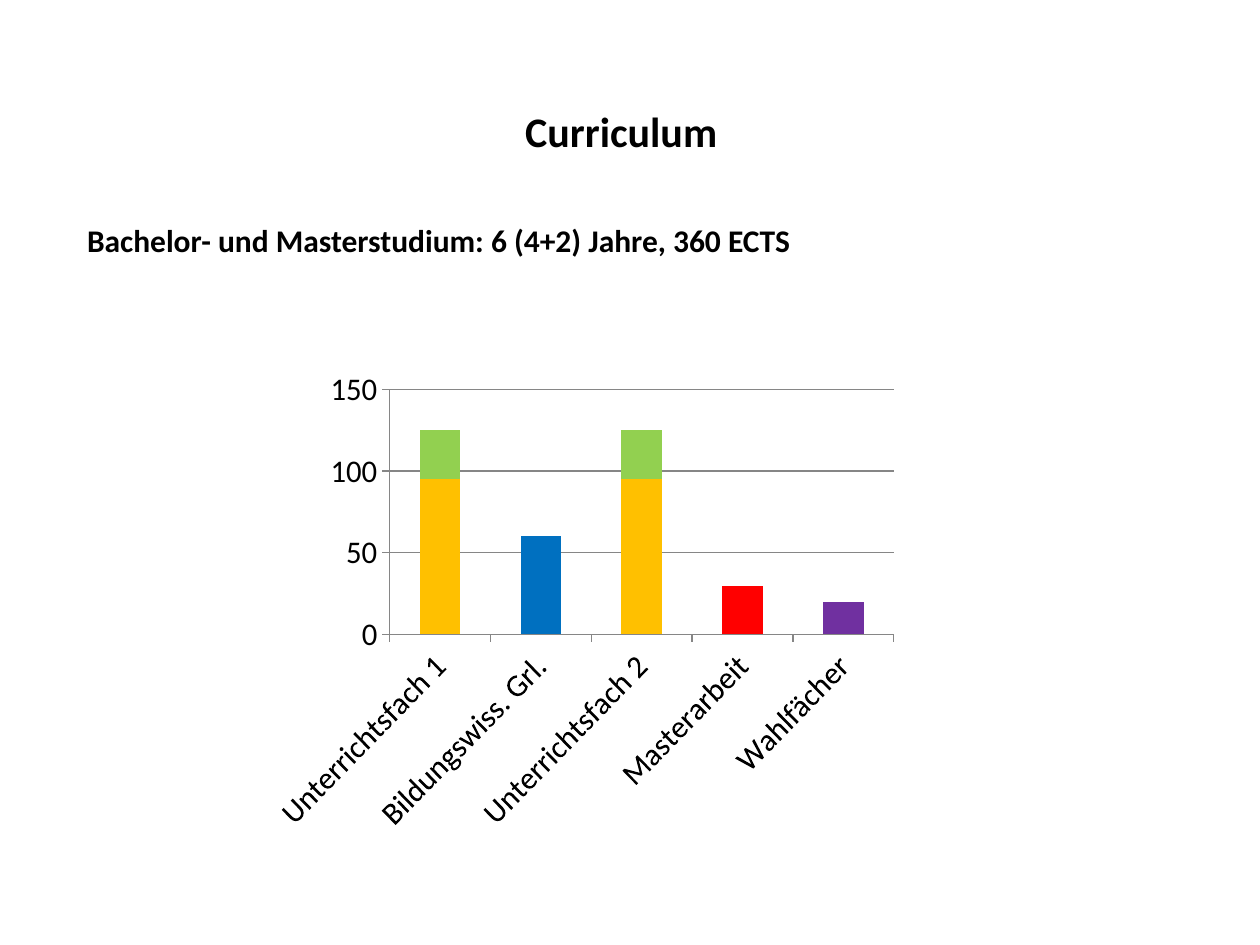
from dataclasses import dataclass, field
from typing import Optional

from lxml.etree import SubElement
from pptx import Presentation
from pptx.chart.data import CategoryChartData
from pptx.dml.color import RGBColor
from pptx.enum.chart import XL_CHART_TYPE, XL_TICK_LABEL_POSITION, XL_TICK_MARK
from pptx.enum.text import MSO_ANCHOR, MSO_AUTO_SIZE, PP_ALIGN
from pptx.oxml.ns import qn
from pptx.util import Cm, Pt

FONT = "Calibri"
BLACK = RGBColor(0x00, 0x00, 0x00)
GREY = RGBColor(0x86, 0x86, 0x86)
AMBER = RGBColor(0xFF, 0xC0, 0x00)
GREEN = RGBColor(0x92, 0xD0, 0x50)
BLUE = RGBColor(0x00, 0x70, 0xC0)
RED = RGBColor(0xFF, 0x00, 0x00)
PURPLE = RGBColor(0x70, 0x30, 0xA0)


@dataclass
class Box:
    """Position and size in centimetres."""
    left: float
    top: float
    width: float
    height: float


@dataclass
class Series:
    name: str
    values: list[Optional[int]]
    color: RGBColor
    point_colors: dict[int, RGBColor] = field(default_factory=dict)


CATEGORIES = ["Unterrichtsfach 1", "Bildungswiss. Grl.", "Unterrichtsfach 2",
              "Masterarbeit", "Wahlfächer"]
SERIES = [
    Series("Series 1", [95, 60, 95, 30, 20], AMBER, {1: BLUE, 3: RED, 4: PURPLE}),
    Series("Series 2", [30, None, 30, None, None], GREEN),
]
PLOT_AREA = {"x": 0.132, "y": 0.164, "w": 0.687, "h": 0.38}


def place(shape, box: Box) -> None:
    shape.left, shape.top = Cm(box.left), Cm(box.top)
    shape.width, shape.height = Cm(box.width), Cm(box.height)


def add_text(paragraph, text: str, *, size: float, bold: bool = False,
             color: RGBColor = BLACK) -> None:
    run = paragraph.add_run()
    run.text = text
    run.font.name = FONT
    run.font.size = Pt(size)
    run.font.bold = bold
    run.font.color.rgb = color


def fill_solid(element, color: RGBColor) -> None:
    element.format.fill.solid()
    element.format.fill.fore_color.rgb = color


def style_axis(axis) -> None:
    axis.major_tick_mark = XL_TICK_MARK.OUTSIDE
    axis.minor_tick_mark = XL_TICK_MARK.NONE
    axis.tick_label_position = XL_TICK_LABEL_POSITION.NEXT_TO_AXIS
    axis.format.line.color.rgb = GREY
    axis.tick_labels.font.size = Pt(18)


def set_plot_layout(chart, fractions: dict[str, float]) -> None:
    plot_area = chart.plots[0]._element.getparent()
    layout = plot_area.find(qn("c:layout"))
    if layout is None:
        layout = SubElement(plot_area, qn("c:layout"))
        plot_area.insert(0, layout)
    manual = SubElement(layout, qn("c:manualLayout"))
    settings = {"layoutTarget": "inner", "xMode": "edge", "yMode": "edge", **fractions}
    for tag, value in settings.items():
        SubElement(manual, qn(f"c:{tag}")).set("val", str(value))


def add_stacked_chart(slide, box: Box, categories: list[str],
                      series_list: list[Series]) -> None:
    data = CategoryChartData()
    data.categories = categories
    for series in series_list:
        data.add_series(series.name, series.values)
    chart = slide.shapes.add_chart(
        XL_CHART_TYPE.COLUMN_STACKED, Cm(box.left), Cm(box.top),
        Cm(box.width), Cm(box.height), data).chart
    chart.has_legend = False
    chart.has_title = False
    chart.font.name = FONT
    chart.font.size = Pt(18)
    chart.font.color.rgb = BLACK

    # Columns
    plot = chart.plots[0]
    plot.gap_width, plot.overlap = 150, 100
    plot.vary_by_categories = False
    for drawn, series in zip(plot.series, series_list):
        drawn.invert_if_negative = False
        fill_solid(drawn, series.color)
        for index, color in series.point_colors.items():
            fill_solid(drawn.points[index], color)

    # Axes, with slanted category labels
    style_axis(chart.category_axis)
    style_axis(chart.value_axis)
    label_body = chart.category_axis._element.find(qn("c:txPr")).find(qn("a:bodyPr"))
    label_body.set("rot", "-2700000")
    chart.value_axis.minimum_scale = 0
    chart.value_axis.maximum_scale = 150
    chart.value_axis.major_unit = 50
    chart.value_axis.has_major_gridlines = True
    chart.value_axis.major_gridlines.format.line.color.rgb = GREY
    set_plot_layout(chart, PLOT_AREA)


def main() -> None:
    presentation = Presentation()
    presentation.slide_width, presentation.slide_height = Cm(25.4), Cm(19.05)
    slide = presentation.slides.add_slide(presentation.slide_layouts[1])

    # Title; the larger trailing space sets the line height
    title = slide.shapes.title
    place(title, Box(1.27, 0.76, 22.86, 3.18))
    title.text_frame.vertical_anchor = MSO_ANCHOR.MIDDLE
    heading = title.text_frame.paragraphs[0]
    heading.alignment = PP_ALIGN.CENTER
    add_text(heading, "Curriculum", size=24, bold=True)
    add_text(heading, " ", size=44)

    # Body line without a bullet
    body = slide.placeholders[1]
    place(body, Box(1.5, 4.32, 22.86, 12.57))
    body.text_frame.auto_size = MSO_AUTO_SIZE.NONE
    statement = body.text_frame.paragraphs[0]
    properties = statement._p.get_or_add_pPr()
    properties.set("marL", "0")
    properties.set("indent", "0")
    SubElement(properties, qn("a:buNone"))
    add_text(statement, "Bachelor- und Masterstudium: 6 (4+2) Jahre, 360 ECTS",
             size=18, bold=True)

    # Credits per part of the programme
    add_stacked_chart(slide, Box(5.51, 5.72, 15.19, 13), CATEGORIES, SERIES)

    presentation.save("out.pptx")


if __name__ == "__main__":
    main()
